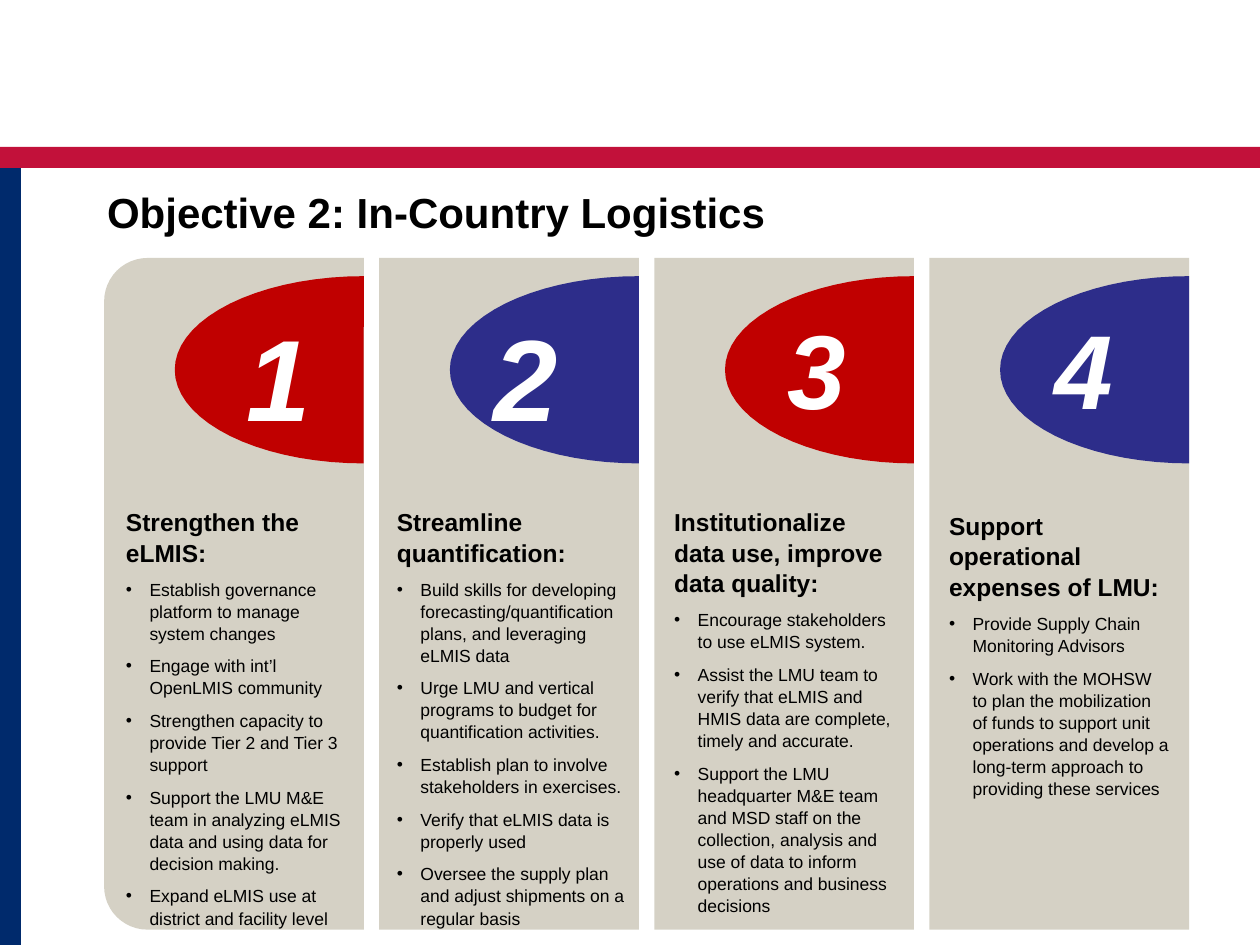
import math
from pptx import Presentation
from pptx.dml.color import RGBColor
from pptx.enum import shapes, text
from pptx.oxml.ns import qn
from pptx.util import Pt
from lxml import etree

FONT = "Arial"
CRIMSON = RGBColor(0xC2, 0x11, 0x3A)
NAVY = RGBColor(0x00, 0x2A, 0x6C)
STONE = RGBColor(0xD5, 0xD1, 0xC5)
RED = RGBColor(0xC0, 0x00, 0x00)
INDIGO = RGBColor(0x2D, 0x2D, 0x8A)
WHITE = RGBColor(0xFF, 0xFF, 0xFF)
BLACK = RGBColor(0x00, 0x00, 0x00)

PANEL_LEFT, PANEL_TOP, PANEL_W, PANEL_H = 59.5, 147.4, 148.4, 383.8
PITCH = 157.2
OVAL_W, OVAL_H, OVAL_DY = 108, 107, 10.4
NUMBER_DY = 21.1

# number size, number dx, text dx, text dy, text width, heading, bullets
COLUMNS = [
    (66, 81.6, 12.5, 141.3, 132.5, "Strengthen the eLMIS:", [
        "Establish governance platform to manage system changes",
        "Engage with int’l OpenLMIS community",
        "Strengthen capacity to provide Tier 2 and Tier 3 support",
        "Support the LMU M&E team in analyzing eLMIS data and using data for decision making.",
        "Expand eLMIS use at district and facility level"]),
    (66, 65.5, 10.1, 141.3, 130.5, "Streamline quantification:", [
        "Build skills for developing forecasting/quantification plans, and leveraging eLMIS data",
        "Urge LMU and vertical programs to budget for quantification activities.",
        "Establish plan to involve stakeholders in exercises.",
        "Verify that eLMIS data is properly used",
        "Oversee the supply plan and adjust shipments on a regular basis"]),
    (60, 76.1, 11.3, 141.3, 125.5, "Institutionalize data use, improve data quality:", [
        "Encourage stakeholders to use eLMIS system.",
        "Assist the LMU team to verify that eLMIS and HMIS data are complete, timely and accurate.",
        "Support the LMU headquarter M&E team and MSD staff on the collection, analysis "
        "and use of data to inform operations and business decisions"]),
    (60, 71.5, 11.2, 143.5, 125.5, "Support operational expenses of LMU:", [
        "Provide Supply Chain Monitoring Advisors",
        "Work with the MOHSW to plan the mobilization of funds to support unit operations "
        "and develop a long-term approach to providing these services"]),
]


def paint(sp, color):
    sp.shadow.inherit = False
    sp.fill.solid()
    sp.fill.fore_color.rgb = color
    sp.line.fill.background()


def add_block(s, kind, x, y, w, h, color):
    sp = s.shapes.add_shape(kind, Pt(x), Pt(y), Pt(w), Pt(h))
    paint(sp, color)
    return sp


def add_text_box(s, x, y, w, h):
    tf = s.shapes.add_textbox(Pt(x), Pt(y), Pt(w), Pt(h)).text_frame
    tf.word_wrap = True
    tf.margin_left = tf.margin_right = tf.margin_top = tf.margin_bottom = 0
    return tf


def style(p, size, color=BLACK, bold=False, italic=False):
    for r in p.runs:
        f = r.font
        f.name, f.size, f.bold, f.italic = FONT, Pt(size), bold, italic
        f.color.rgb = color


def add_bullet(p, indent):
    pPr = p._p.get_or_add_pPr()
    pPr.set("marL", str(Pt(indent)))
    pPr.set("indent", str(-Pt(indent)))
    etree.SubElement(pPr, qn("a:buFont")).set("typeface", FONT)
    etree.SubElement(pPr, qn("a:buChar")).set("char", "•")


def add_frame(s):
    add_block(s, shapes.MSO_SHAPE.RECTANGLE, 0, 84, 720, 12, CRIMSON)
    add_block(s, shapes.MSO_SHAPE.RECTANGLE, 0, 96, 12, 444, NAVY)


def add_title(s, x, y, w, h):
    sp = s.shapes.title
    sp.left, sp.top, sp.width, sp.height = Pt(x), Pt(y), Pt(w), Pt(h)
    tf = sp.text_frame
    tf.text = "Objective 2: In-Country Logistics"
    tf.vertical_anchor = text.MSO_ANCHOR.TOP
    p = tf.paragraphs[0]
    p.alignment = text.PP_ALIGN.LEFT
    style(p, 24, bold=True)


def add_panel(s, x, y, w, h, rounded):
    if not rounded:
        return add_block(s, shapes.MSO_SHAPE.RECTANGLE, x, y, w, h, STONE)
    sp = add_block(s, shapes.MSO_SHAPE.ROUND_2_SAME_RECTANGLE,
                   x + (w - h) / 2, y + (h - w) / 2, h, w, STONE)
    sp.rotation = 270
    return sp


def add_half_oval(s, x, y, w, h, color, steps=36):
    angles = [math.pi * (0.5 + i / steps) for i in range(steps + 1)]
    pts = [(Pt(x + w + w * math.cos(a)), Pt(y + h / 2 - h / 2 * math.sin(a)))
           for a in angles]
    fb = s.shapes.build_freeform(*pts[0])
    fb.add_line_segments(pts[1:], close=True)
    paint(fb.convert_to_shape(), color)


def add_number(s, x, y, w, number, size):
    p = add_text_box(s, x, y, w, size * 1.11).paragraphs[0]
    p.text = str(number)
    p.line_spacing = 1.08
    style(p, size, WHITE, bold=True, italic=True)


def add_list(s, x, y, w, h, heading, bullets):
    tf = add_text_box(s, x, y, w, h)
    tf.text = heading
    for item in bullets:
        p = tf.add_paragraph()
        p.text = item
        p.space_before = Pt(3)
        add_bullet(p, 13.5)
        style(p, 10)
    style(tf.paragraphs[0], 14, bold=True)
    for p in tf.paragraphs:
        p.space_after = Pt(3)
        p.line_spacing = 1.05


def add_column(s, x, y, w, h, index, column):
    size, number_dx, text_dx, text_dy, text_w, heading, bullets = column
    add_panel(s, x, y, w, h, rounded=index == 0)
    add_half_oval(s, x + w - OVAL_W, y + OVAL_DY, OVAL_W, OVAL_H,
                  (RED, INDIGO)[index % 2])
    add_number(s, x + number_dx, y + NUMBER_DY, w - number_dx, index + 1, size)
    add_list(s, x + text_dx, y + text_dy, text_w, h - text_dy - 8, heading, bullets)


def main():
    prs = Presentation()
    prs.slide_width, prs.slide_height = Pt(720), Pt(540)
    s = prs.slides.add_slide(prs.slide_layouts[5])
    add_frame(s)
    add_title(s, 54, 103, 612, 48)
    for i, column in enumerate(COLUMNS):
        add_column(s, PANEL_LEFT + i * PITCH, PANEL_TOP, PANEL_W, PANEL_H, i, column)
    prs.save("out.pptx")


if __name__ == "__main__":
    main()
